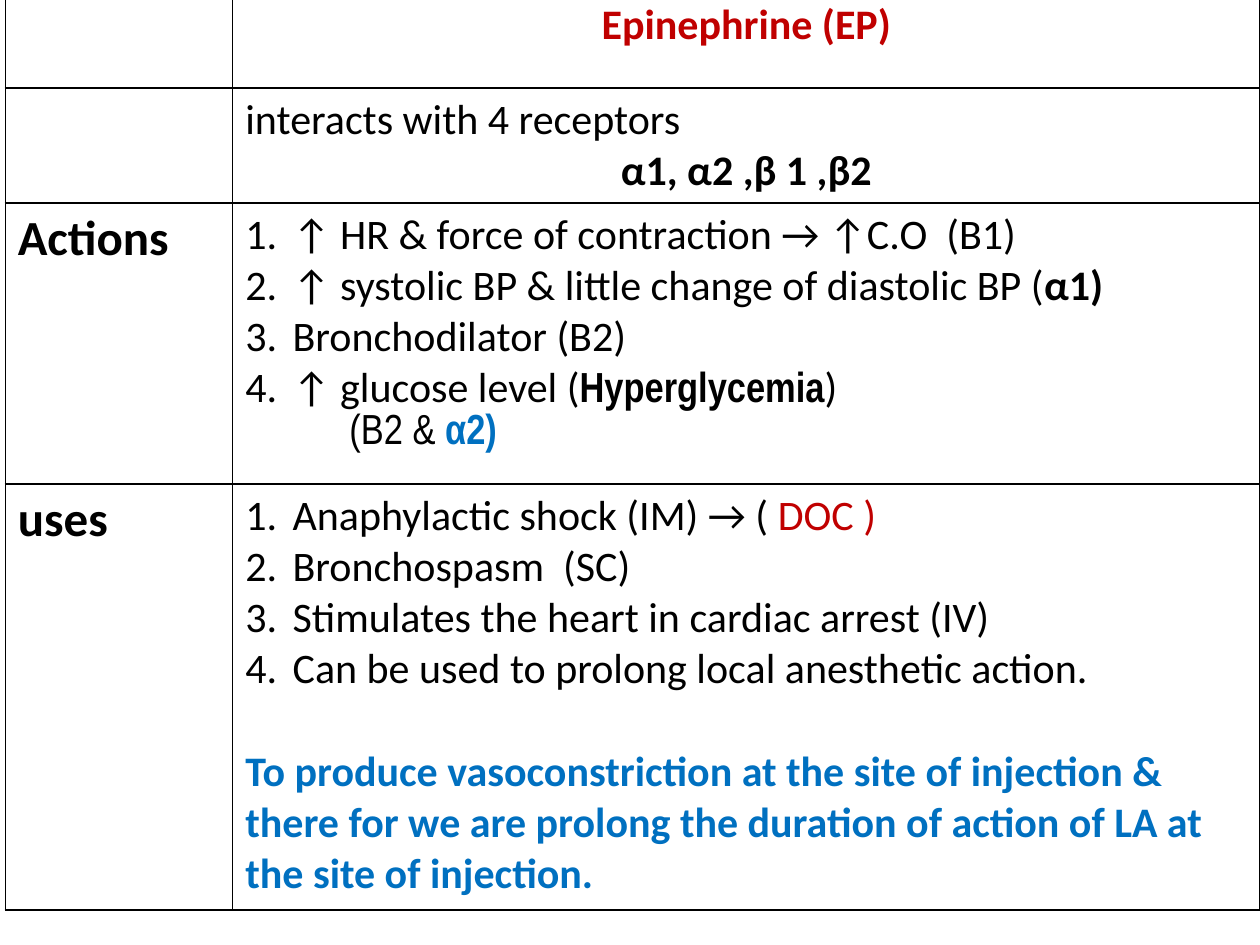
from dataclasses import dataclass

from lxml import etree
from pptx import Presentation
from pptx.dml.color import RGBColor
from pptx.enum.text import PP_ALIGN
from pptx.oxml.ns import qn
from pptx.util import Pt

CENTER = PP_ALIGN.CENTER
LEFT = PP_ALIGN.LEFT


@dataclass(frozen=True)
class Theme:
    font: str = "Calibri"
    narrow_font: str = "Arial Narrow"
    ink: str = "000000"
    red: str = "C00000"
    blue: str = "0070C0"
    body_size: int = 24
    label_size: int = 28
    border_width: int = 1
    number_indent: int = 27


THEME = Theme()


@dataclass(frozen=True)
class Span:
    text: str
    bold: bool = False
    color: str = THEME.ink
    font: str = THEME.font
    size: int = THEME.body_size


@dataclass(frozen=True)
class Line:
    spans: tuple
    align: PP_ALIGN = LEFT
    numbered: bool = False
    indent: float = 0
    space_before: float = 0


def numbered(*spans):
    return Line(spans, numbered=True, indent=THEME.number_indent)


def label(text):
    return [Line((Span(text, bold=True, size=THEME.label_size),))]


HEADING = [Line((Span("Epinephrine (EP)", True, THEME.red),), CENTER)]
RECEPTORS = [
    Line((Span("interacts with 4 receptors"),)),
    Line((Span("α1, α2 ,β 1 ,β2", True),), CENTER),
]
ACTIONS = [
    numbered(Span("↑ HR & force of contraction → ↑C.O  (B1)")),
    numbered(Span("↑ systolic BP & little change of diastolic BP ("), Span("α1)", True)),
    numbered(Span("Bronchodilator (B2)")),
    numbered(
        Span("↑ glucose level ("),
        Span("Hyperglycemia", True, font=THEME.narrow_font),
        Span(")"),
    ),
    Line(
        (
            Span("(B2 & ", font=THEME.narrow_font),
            Span("α2)", True, THEME.blue, THEME.narrow_font),
        ),
        indent=59.5,
    ),
]
USES = [
    numbered(Span("Anaphylactic shock (IM) → ( "), Span("DOC )", color=THEME.red)),
    numbered(Span("Bronchospasm  (SC)")),
    numbered(Span("Stimulates the heart in cardiac arrest (IV)")),
    numbered(Span("Can be used to prolong local anesthetic action.")),
    Line(
        (
            Span(
                "To produce vasoconstriction at the site of injection & there for "
                "we are prolong the duration of action of LA at the site of injection.",
                True,
                THEME.blue,
            ),
        ),
        space_before=29.3,
    ),
]
DRUG_ROWS = [
    (54, [], HEADING),
    (65.5, [], RECEPTORS),
    (160.5, label("Actions"), ACTIONS),
    (243.4, label("uses"), USES),
]


def write_line(paragraph, line):
    paragraph.alignment = line.align
    paragraph.space_before = Pt(line.space_before)
    properties = paragraph._p.get_or_add_pPr()
    properties.set("marL", str(Pt(line.indent)))
    properties.set("indent", str(-Pt(line.indent) if line.numbered else 0))
    if line.numbered:
        etree.SubElement(properties, qn("a:buAutoNum"), type="arabicPeriod")
    for span in line.spans:
        run = paragraph.add_run()
        run.text = span.text
        run.font.name = span.font
        run.font.size = Pt(span.size)
        run.font.bold = span.bold
        run.font.color.rgb = RGBColor.from_string(span.color)


def draw_borders(cell):
    properties = cell._tc.get_or_add_tcPr()
    for position, side in enumerate(("a:lnL", "a:lnR", "a:lnT", "a:lnB")):
        border = etree.Element(qn(side), w=str(Pt(THEME.border_width)))
        fill = etree.SubElement(border, qn("a:solidFill"))
        etree.SubElement(fill, qn("a:srgbClr"), val=THEME.ink)
        properties.insert(position, border)


def fill_cell(cell, lines):
    cell.fill.background()
    draw_borders(cell)
    frame = cell.text_frame
    for index, line in enumerate(lines):
        write_line(frame.add_paragraph() if index else frame.paragraphs[0], line)


def add_drug_table(slide, left, top, width, label_width, rows):
    height = sum(row_height for row_height, _, _ in rows)
    table = slide.shapes.add_table(
        len(rows), 2, Pt(left), Pt(top), Pt(width), Pt(height)
    ).table
    table.first_row = False
    table.horz_banding = False
    table.columns[0].width = Pt(label_width)
    table.columns[1].width = Pt(width - label_width)
    for index, (row_height, *contents) in enumerate(rows):
        table.rows[index].height = Pt(row_height)
        for column, lines in enumerate(contents):
            fill_cell(table.cell(index, column), lines)


def main():
    presentation = Presentation()
    presentation.slide_width = Pt(720)
    presentation.slide_height = Pt(540)
    slide = presentation.slides.add_slide(presentation.slide_layouts[6])
    add_drug_table(slide, 3, -3.8, 717, 130, DRUG_ROWS)
    presentation.save("out.pptx")


if __name__ == "__main__":
    main()
